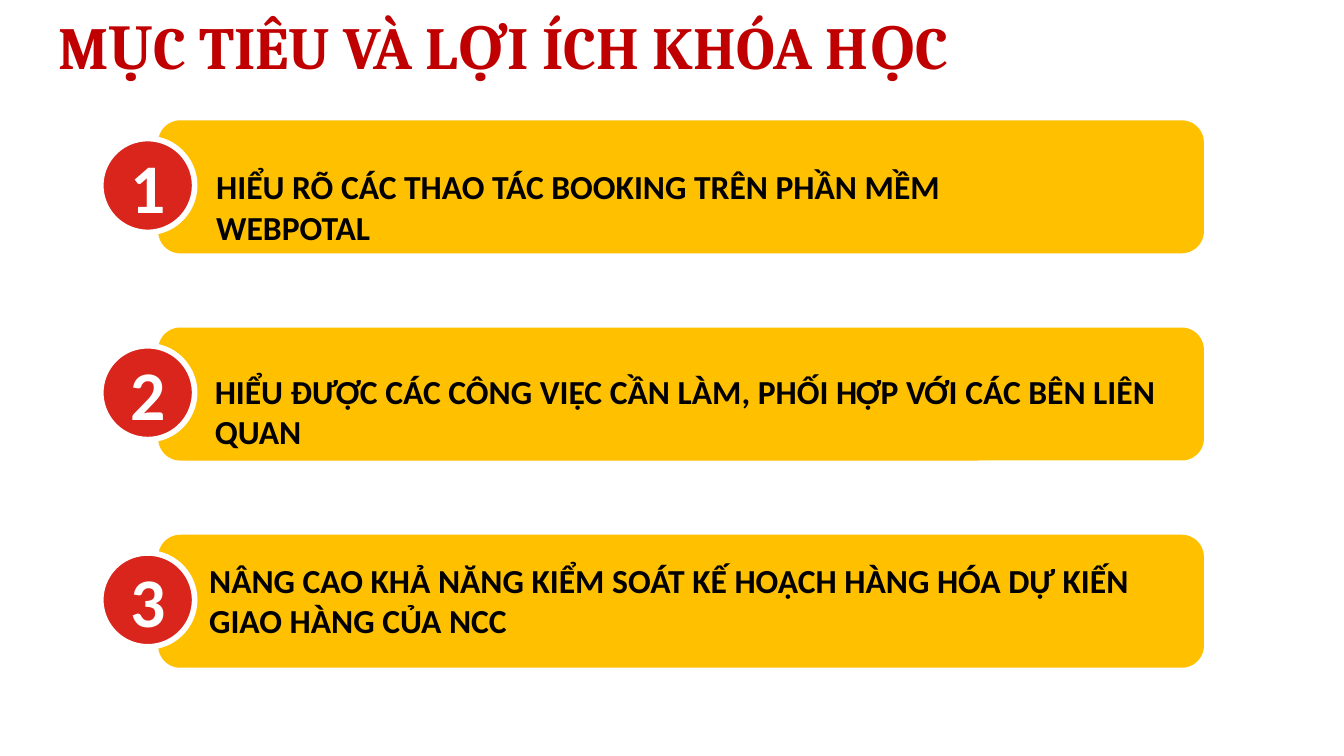
from pptx import Presentation, util as u
from pptx.dml.color import RGBColor
from pptx.enum import shapes, text

PX = 9525  # 96 px to the inch


def px(*lengths):
    return [length * PX for length in lengths]


def write(shape, content, size, color, font="Calibri", align=text.PP_ALIGN.LEFT,
          anchor=text.MSO_ANCHOR.TOP, wrap=True, spacing=None):
    frame = shape.text_frame
    frame.word_wrap = wrap
    frame.vertical_anchor = anchor
    frame.text = content
    for paragraph in frame.paragraphs:
        paragraph.alignment = align
        paragraph.line_spacing = spacing
        paragraph.font.name = font
        paragraph.font.size = u.Pt(size)
        paragraph.font.bold = True
        paragraph.font.color.rgb = RGBColor.from_string(color)


prs = Presentation()
prs.slide_width, prs.slide_height = px(960, 540)
slide = prs.slides.add_slide(prs.slide_layouts[6])

title = slide.shapes.add_textbox(*px(32, 23, 736, 26))
write(title, "MỤC TIÊU VÀ LỢI ÍCH KHÓA HỌC", 32, "C00000", font="Cambria",
      anchor=text.MSO_ANCHOR.MIDDLE, spacing=0.9)

# Wording, then left, top offset from the bar, width and wrapping of its box
goals = [
    ("HIỂU RÕ CÁC THAO TÁC BOOKING TRÊN PHẦN MỀM\nWEBPOTAL", 145, 28, 541, False),
    ("HIỂU ĐƯỢC CÁC CÔNG VIỆC CẦN LÀM, PHỐI HỢP VỚI CÁC BÊN LIÊN QUAN", 144, 26, 732, True),
    ("NÂNG CAO KHẢ NĂNG KIỂM SOÁT KẾ HOẠCH HÀNG HÓA DỰ KIẾN GIAO HÀNG CỦA NCC",
     140, 13, 732, True),
]

for index, (goal, left, offset, width, wrap) in enumerate(goals):
    top = 86 + 148 * index

    bar = slide.shapes.add_shape(shapes.MSO_SHAPE.ROUNDED_RECTANGLE, *px(113, top, 747, 95))
    bar.shadow.inherit = False
    bar.fill.solid()
    bar.fill.fore_color.rgb = RGBColor.from_string("FFC000")
    bar.line.fill.background()

    badge = slide.shapes.add_shape(shapes.MSO_SHAPE.OVAL, *px(72, top + 13, 67, 67))
    badge.shadow.inherit = False
    badge.fill.solid()
    badge.fill.fore_color.rgb = RGBColor.from_string("DA251C")
    badge.line.color.rgb = RGBColor.from_string("FFFFFF")
    badge.line.width = u.Pt(3)
    write(badge, str(index + 1), 37.3, "FFFFFF", align=text.PP_ALIGN.CENTER,
          anchor=text.MSO_ANCHOR.MIDDLE)

    label = slide.shapes.add_textbox(*px(left, top + offset, width, 68))
    write(label, goal, 18, "000000", wrap=wrap)

prs.save("out.pptx")
